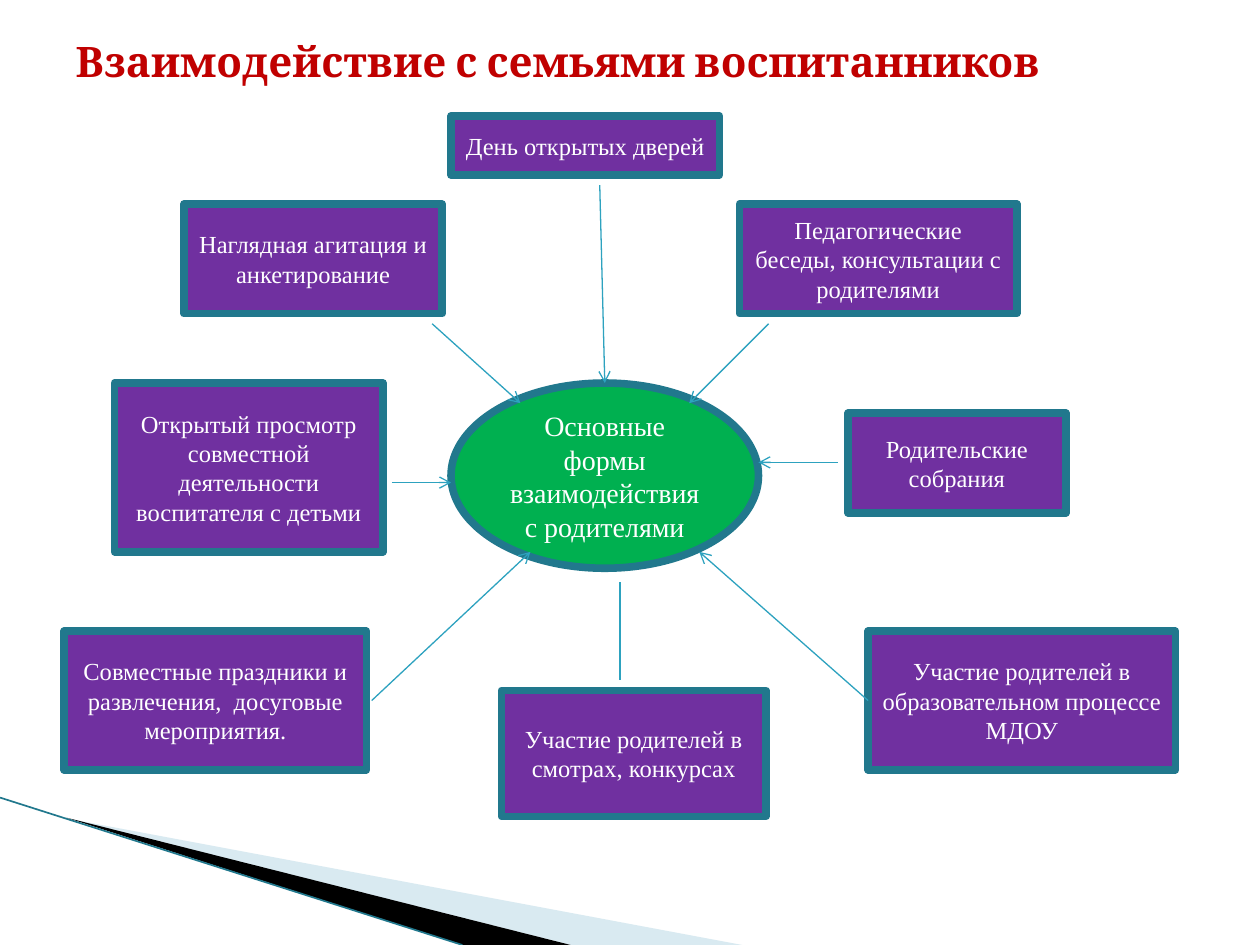
"""Builds a slide on the ways a kindergarten works with families."""
from lxml.etree import SubElement
from pptx import Presentation
from pptx.dml.color import RGBColor
from pptx.enum.shapes import MSO_CONNECTOR as Link, MSO_SHAPE as Kind
from pptx.enum.text import MSO_ANCHOR as Anchor, PP_ALIGN as Align
from pptx.oxml.ns import qn
from pptx.util import Inches, Pt


def paint(part, tone):
    part.solid()
    part.fore_color.rgb = RGBColor.from_string(tone)


def write(shape, text, font, size, tone, align, bold=False):
    frame = shape.text_frame
    frame.word_wrap = True
    frame.vertical_anchor = Anchor.MIDDLE
    para = frame.paragraphs[0]
    para.alignment = align
    run = para.add_run()
    run.text = text
    run.font.name = font
    run.font.size = Pt(size)
    run.font.bold = bold
    paint(run.font.fill, tone)


deck = Presentation()
deck.slide_width, deck.slide_height = Inches(10), Inches(7.5)
slide = deck.slides.add_slide(deck.slide_layouts[5])
shapes = slide.shapes

wedges = [
    ("A0CBDC", 40, [(0.55, 6.5), (5.89, 7.5), (4.53, 7.5)]),
    ("000000", 100, [(0.53, 6.49), (4.53, 7.5), (3.67, 7.5)]),
]
for tone, alpha, spots in wedges:
    ends = [(Inches(x), Inches(y)) for x, y in spots]
    pen = shapes.build_freeform(*ends[0], scale=1.0)
    pen.add_line_segments(ends[1:], close=True)
    wedge = pen.convert_to_shape()
    wedge.shadow.inherit = False
    paint(wedge.fill, tone)
    wedge.line.fill.background()
    if alpha < 100:
        color = wedge._element.spPr.find(qn("a:solidFill"))[0]
        SubElement(color, qn("a:alpha")).set("val", str(alpha * 1000))

title = shapes.title
title.left, title.top = Inches(0.5), Inches(0.13)
title.width, title.height = Inches(9), Inches(0.71)
write(title, "Взаимодействие с семьями воспитанников", "Cambria", 24,
      "C00000", Align.LEFT, True)

forms = [
    ("fun", 0.51, 5.01, 2.4, 1.1,
     "Совместные праздники и развлечения,  досуговые мероприятия."),
    ("study", 6.89, 5.01, 2.44, 1.1,
     "Участие родителей в образовательном процессе МДОУ"),
    ("open", 3.58, 0.92, 2.13, 0.47, "День открытых дверей"),
    ("poll", 1.46, 1.62, 2.05, 0.87, "Наглядная агитация и анкетирование"),
    ("talk", 5.87, 1.62, 2.2, 0.87,
     "Педагогические беседы, консультации с родителями"),
    ("hub", 3.58, 3.04, 2.44, 1.47,
     "Основные формы взаимодействия с родителями"),
    ("view", 0.91, 3.04, 2.13, 1.34,
     "Открытый просмотр совместной деятельности воспитателя с детьми"),
    ("meet", 6.73, 3.28, 1.73, 0.79, "Родительские собрания"),
    ("show", 3.98, 5.48, 2.1, 1, "Участие родителей в смотрах, конкурсах"),
]
boxes = {}
for name, left, top, wide, high, text in forms:
    hub = name == "hub"
    box = shapes.add_shape(Kind.OVAL if hub else Kind.RECTANGLE, Inches(left),
                           Inches(top), Inches(wide), Inches(high))
    box.shadow.inherit = False
    paint(box.fill, "00B050" if hub else "7030A0")
    paint(box.line.fill, "21788D")
    box.line.width = Pt(4.33)
    write(box, text, "Times New Roman", 16 if hub else 14, "FFFFFF",
          Align.CENTER)
    boxes[name] = box

lines = [
    ("edge", 0, 6.33, 3.67, 7.5),
    ("show", 4.92, 4.62, 4.92, 5.4),
    ("open", 4.76, 1.47, 4.8, 3.04),
    ("poll", 3.43, 2.57, 4.13, 3.2),
    ("view", 3.11, 3.83, 3.58, 3.83),
    ("meet", 6.65, 3.67, 6.02, 3.67),
    ("study", 6.89, 5.56, 5.55, 4.38),
    ("fun", 2.95, 5.56, 4.21, 4.38),
    ("talk", 6.1, 2.57, 5.47, 3.2),
]
for name, *ends in lines:
    line = shapes.add_connector(Link.STRAIGHT, *map(Inches, ends))
    paint(line.line.fill, "21788D" if name == "edge" else "2DA2BF")
    line.line.width = Pt(0.95 if name == "edge" else 0.75)
    if name not in ("edge", "show"):
        SubElement(line.line._get_or_add_ln(), qn("a:tailEnd")).set("type", "arrow")
    SubElement(line._element.spPr, qn("a:effectLst"))
    if name == "study":
        line.begin_connect(boxes[name], 1)
    if name == "open":
        line.end_connect(boxes["hub"], 0)

deck.save("out.pptx")
